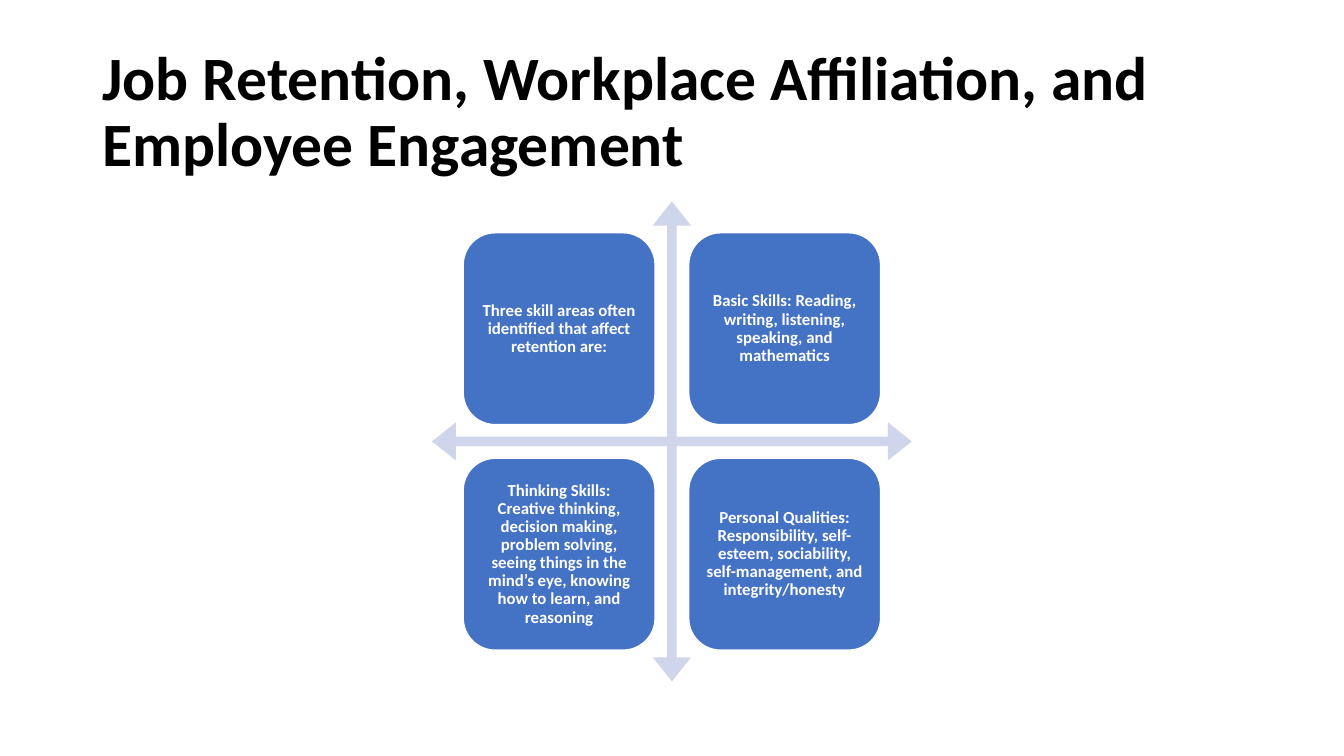
from dataclasses import dataclass

from pptx import Presentation
from pptx.dml.color import RGBColor
from pptx.enum.shapes import MSO_SHAPE
from pptx.enum.text import MSO_ANCHOR, MSO_AUTO_SIZE, PP_ALIGN
from pptx.slide import Slide
from pptx.text.text import TextFrame
from pptx.util import Pt

QUAD_ARROW = MSO_SHAPE.QUAD_ARROW
ROUNDED_RECTANGLE = MSO_SHAPE.ROUNDED_RECTANGLE
MIDDLE = MSO_ANCHOR.MIDDLE
NO_AUTOFIT = MSO_AUTO_SIZE.NONE
LEFT = PP_ALIGN.LEFT
CENTER = PP_ALIGN.CENTER


@dataclass(frozen=True)
class Theme:
    font: str = "Calibri"
    title_size: float = 44
    tile_size: float = 12
    line_spacing: float = 0.9
    black: RGBColor = RGBColor(0x00, 0x00, 0x00)
    white: RGBColor = RGBColor(0xFF, 0xFF, 0xFF)
    tile: RGBColor = RGBColor(0x44, 0x72, 0xC4)
    arrow: RGBColor = RGBColor(0xCF, 0xD5, 0xEA)


@dataclass(frozen=True)
class Tile:
    column: int
    row: int
    text: str


THEME = Theme()

MATRIX_LEFT = 308.6
MATRIX_TOP = 144
MATRIX_SIZE = 342.7
TILE_SIZE = 0.4 * MATRIX_SIZE
TILE_OFFSET = 0.065 * MATRIX_SIZE
TILE_PITCH = 0.47 * MATRIX_SIZE
TILE_INSET = 3.6

TITLE = "Job Retention, Workplace Affiliation, and Employee Engagement"
TILES = (
    Tile(0, 0, "Three skill areas often identified that affect retention are:"),
    Tile(1, 0, "Basic Skills: Reading, writing, listening, speaking, and mathematics"),
    Tile(0, 1, "Thinking Skills: Creative thinking, decision making, problem solving, "
               "seeing things in the mind’s eye, knowing how to learn, and reasoning"),
    Tile(1, 1, "Personal Qualities: Responsibility, self-esteem, sociability, "
               "self-management, and integrity/honesty"),
)


def write_text(text_frame: TextFrame, text: str, size: float,
               color: RGBColor, alignment: PP_ALIGN) -> None:
    text_frame.text = text
    text_frame.word_wrap = True
    text_frame.auto_size = NO_AUTOFIT
    text_frame.vertical_anchor = MIDDLE
    paragraph = text_frame.paragraphs[0]
    paragraph.alignment = alignment
    paragraph.line_spacing = THEME.line_spacing
    paragraph.space_before = Pt(0)
    for run in paragraph.runs:
        run.font.name = THEME.font
        run.font.size = Pt(size)
        run.font.bold = True
        run.font.color.rgb = color


def add_title(slide: Slide) -> None:
    title = slide.shapes.title
    title.left, title.top = Pt(66), Pt(28.75)
    title.width, title.height = Pt(828), Pt(104.4)
    write_text(title.text_frame, TITLE, THEME.title_size, THEME.black, LEFT)


def add_arrow_cross(slide: Slide) -> None:
    shape = slide.shapes.add_shape(QUAD_ARROW, Pt(MATRIX_LEFT), Pt(MATRIX_TOP),
                                   Pt(MATRIX_SIZE), Pt(MATRIX_SIZE))
    for index, value in enumerate((0.02, 0.04, 0.05)):
        shape.adjustments[index] = value
    shape.shadow.inherit = False
    shape.fill.solid()
    shape.fill.fore_color.rgb = THEME.arrow
    shape.line.fill.background()


def add_tile(slide: Slide, tile: Tile) -> None:
    left = MATRIX_LEFT + TILE_OFFSET + tile.column * TILE_PITCH
    top = MATRIX_TOP + TILE_OFFSET + tile.row * TILE_PITCH
    shape = slide.shapes.add_shape(ROUNDED_RECTANGLE, Pt(left), Pt(top),
                                   Pt(TILE_SIZE), Pt(TILE_SIZE))
    shape.shadow.inherit = False
    shape.fill.solid()
    shape.fill.fore_color.rgb = THEME.tile
    shape.line.color.rgb = THEME.white
    shape.line.width = Pt(1)
    text_frame = shape.text_frame
    text_frame.margin_left = text_frame.margin_right = Pt(TILE_INSET)
    text_frame.margin_top = text_frame.margin_bottom = Pt(TILE_INSET)
    write_text(text_frame, tile.text, THEME.tile_size, THEME.white, CENTER)


def main() -> None:
    presentation = Presentation()
    presentation.slide_width = Pt(960)
    presentation.slide_height = Pt(540)
    slide = presentation.slides.add_slide(presentation.slide_layouts[5])
    add_title(slide)
    add_arrow_cross(slide)
    for tile in TILES:
        add_tile(slide, tile)
    presentation.save("out.pptx")


if __name__ == "__main__":
    main()
